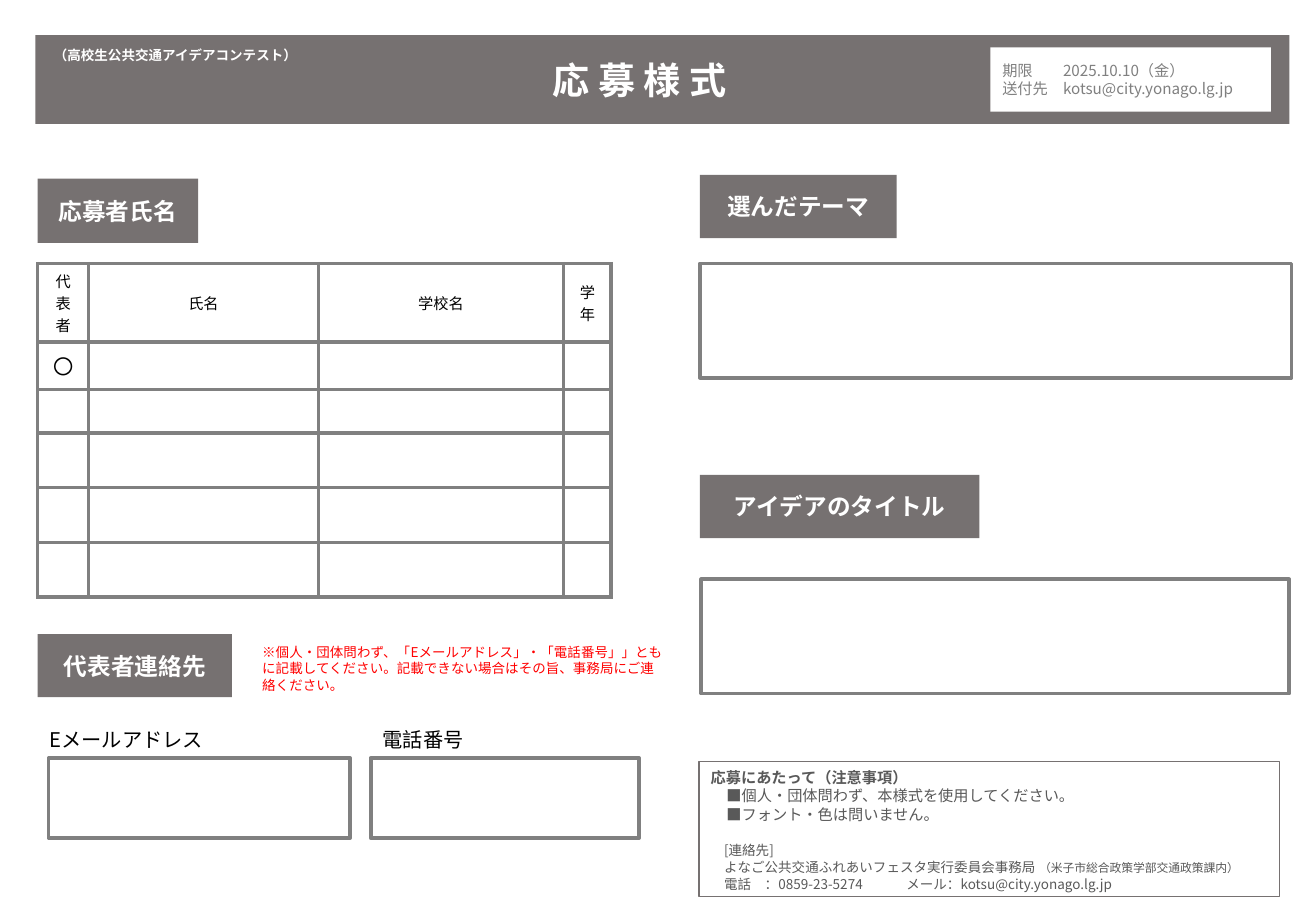
from dataclasses import dataclass

from lxml.etree import SubElement
from pptx import Presentation
from pptx.dml.color import RGBColor
from pptx.enum.shapes import MSO_SHAPE
from pptx.enum.text import MSO_ANCHOR, PP_ALIGN
from pptx.oxml.ns import qn
from pptx.util import Inches, Pt


@dataclass(frozen=True)
class Theme:
    font: str = "Noto Sans CJK JP"
    band: str = "767171"
    border: str = "808080"
    note: str = "595959"
    white: str = "FFFFFF"
    black: str = "000000"
    alert: str = "FF0000"
    title_size: int = 22
    heading_size: int = 14
    label_size: int = 12
    body_size: int = 9
    small_size: int = 8
    tiny_size: int = 7
    frame_width: float = 2.25


THEME = Theme()

HEADINGS = [
    ("応募者氏名", 0.31, 1.47, 1.32, 0.53),
    ("選んだテーマ", 5.76, 1.44, 1.62, 0.52),
    ("アイデアのタイトル", 5.76, 3.91, 2.3, 0.52),
    ("代表者連絡先", 0.31, 5.22, 1.6, 0.52),
]
ENTRY_FRAMES = [
    (5.76, 2.17, 4.87, 0.94),
    (5.77, 4.77, 4.84, 0.94),
    (0.4, 6.24, 2.48, 0.66),
    (3.05, 6.24, 2.21, 0.66),
]
APPLICANT_HEADERS = ["代表者", "氏名", "学校名", "学年"]
COLUMN_WIDTHS = [0.42, 1.89, 2.02, 0.39]
ROW_HEIGHTS = [0.64, 0.39, 0.36, 0.45, 0.45, 0.45]


def write(para, text, size=THEME.body_size, color=THEME.black, bold=False, spacing=0):
    """Add a run to the paragraph; spacing is the letter gap in points."""
    span = para.add_run()
    span.text = text
    font = span.font
    font.size, font.bold, font.name = Pt(size), bold, THEME.font
    font.color.rgb = RGBColor.from_string(color)
    properties = span._r.get_or_add_rPr()
    SubElement(properties, qn("a:ea"), typeface=THEME.font)
    if spacing:
        properties.set("spc", str(spacing * 100))


def set_layout(para, line=None, before=0, indent=0, tab=None):
    """Set line height and space before in points, indent and tab in inches."""
    if line:
        para.line_spacing = Pt(line)
    para.space_before = Pt(before)
    properties = para._p.get_or_add_pPr()
    properties.set("marL", str(Inches(indent)))
    properties.set("indent", "0")
    if tab:
        tabs = SubElement(properties, qn("a:tabLst"))
        SubElement(tabs, qn("a:tab"), pos=str(Inches(tab)), algn="l")


def add_box(slide, left, top, width, height, fill=None, line=None,
            line_width=THEME.frame_width, anchor=MSO_ANCHOR.MIDDLE):
    box = slide.shapes.add_shape(MSO_SHAPE.RECTANGLE, Inches(left), Inches(top),
                                 Inches(width), Inches(height))
    box.shadow.inherit = False
    if fill:
        box.fill.solid()
        box.fill.fore_color.rgb = RGBColor.from_string(fill)
    else:
        box.fill.background()
    if line:
        box.line.color.rgb = RGBColor.from_string(line)
        box.line.width = Pt(line_width)
    else:
        box.line.fill.background()
    box.text_frame.word_wrap = True
    box.text_frame.vertical_anchor = anchor
    box.text_frame.paragraphs[0].alignment = PP_ALIGN.LEFT
    return box


def add_band(slide, text, left, top, width, height, size=THEME.heading_size, spacing=0):
    box = add_box(slide, left, top, width, height, fill=THEME.band)
    para = box.text_frame.paragraphs[0]
    para.alignment = PP_ALIGN.CENTER
    write(para, text, size=size, color=THEME.white, bold=True, spacing=spacing)


def add_label(slide, text, left, top, width, height, line=None, **text_format):
    box = slide.shapes.add_textbox(Inches(left), Inches(top), Inches(width), Inches(height))
    frame = box.text_frame
    frame.word_wrap = True
    frame.vertical_anchor = MSO_ANCHOR.MIDDLE
    set_layout(frame.paragraphs[0], line=line)
    write(frame.paragraphs[0], text, **text_format)


def add_lines(box, lines):
    """Fill a box with (runs, layout) pairs, one paragraph each."""
    frame = box.text_frame
    for index, (runs, layout) in enumerate(lines):
        para = frame.add_paragraph() if index else frame.paragraphs[0]
        para.alignment = PP_ALIGN.LEFT
        set_layout(para, **layout)
        for text, text_format in runs:
            write(para, text, **text_format)


def style_cell(cell):
    properties = cell._tc.get_or_add_tcPr()
    for side in ("lnL", "lnR", "lnT", "lnB"):
        edge = SubElement(properties, qn(f"a:{side}"), w=str(Pt(THEME.frame_width)))
        paint = SubElement(edge, qn("a:solidFill"))
        SubElement(paint, qn("a:srgbClr"), val=THEME.border)
    cell.fill.background()
    cell.vertical_anchor = MSO_ANCHOR.MIDDLE
    para = cell.text_frame.paragraphs[0]
    para.alignment = PP_ALIGN.CENTER
    para._p.get_or_add_endParaRPr().set("sz", str(THEME.body_size * 100))


def add_applicant_table(slide):
    table = slide.shapes.add_table(
        len(ROW_HEIGHTS), len(COLUMN_WIDTHS), Inches(0.31), Inches(2.17),
        Inches(sum(COLUMN_WIDTHS)), Inches(sum(ROW_HEIGHTS))).table
    for column, width in zip(table.columns, COLUMN_WIDTHS):
        column.width = Inches(width)
    for row, height in zip(table.rows, ROW_HEIGHTS):
        row.height = Inches(height)
    for cell in table.iter_cells():
        style_cell(cell)
    for index, header in enumerate(APPLICANT_HEADERS):
        write(table.cell(0, index).text_frame.paragraphs[0], header)
    write(table.cell(1, 0).text_frame.paragraphs[0], "〇", size=THEME.label_size)


def add_deadline(slide):
    box = add_box(slide, 8.15, 0.39, 2.31, 0.53, fill=THEME.white)
    gray = {"color": THEME.border}
    layout = {"line": 10.6, "tab": 0.53}
    add_lines(box, [([(text, gray)], layout) for text in (
        "期限\t2025.10.10（金）", "送付先\tkotsu@city.yonago.lg.jp")])


def add_notes(slide):
    box = add_box(slide, 5.75, 6.27, 4.78, 1.11, line=THEME.band, line_width=1,
                  anchor=MSO_ANCHOR.TOP)
    body = {"color": THEME.note}
    small = {"color": THEME.note, "size": THEME.small_size}
    tiny = {"color": THEME.note, "size": THEME.tiny_size}
    rule = {"line": 11, "indent": 0.13}
    contact = {"line": 10.1, "indent": 0.11}
    add_lines(box, [
        ([("応募にあたって（注意事項）", body | {"bold": True})], {"line": 11}),
        ([("■個人・団体問わず、本様式を使用してください。", body)], rule),
        ([("■フォント・色は問いません。", body)], rule),
        ([("[連絡先]", small)], contact | {"before": 10.8}),
        ([("よなご公共交通ふれあいフェスタ実行委員会事務局 ", small),
          ("（米子市総合政策学部交通政策課内）", tiny)], contact),
        ([("電話　：0859-23-5274\tメール：kotsu@city.yonago.lg.jp", small)],
         contact | {"tab": 1.48}),
    ])


def main():
    deck = Presentation()
    deck.slide_width, deck.slide_height = Inches(10.83), Inches(7.5)
    page = deck.slides.add_slide(deck.slide_layouts[6])

    add_band(page, "応募様式　", 0.29, 0.29, 10.32, 0.73, size=THEME.title_size, spacing=5)
    add_band(page, "（高校生公共交通アイデアコンテスト）", 0.3, 0.31, 2.29, 0.29,
             size=THEME.small_size)
    add_deadline(page)
    for heading in HEADINGS:
        add_band(page, *heading)
    for frame in ENTRY_FRAMES:
        add_box(page, *frame, line=THEME.border)
    add_applicant_table(page)
    for text, left in (("Eメールアドレス", 0.31), ("電話番号", 3.05)):
        add_label(page, text, left, 5.9, 2.05, 0.37, size=THEME.label_size)
    add_label(page, "※個人・団体問わず、「Eメールアドレス」・「電話番号」」ともに記載してください。"
              "記載できない場合はその旨、事務局にご連絡ください。",
              2.06, 5.06, 3.53, 0.89, line=9.5, size=THEME.small_size, color=THEME.alert)
    add_notes(page)
    deck.save("out.pptx")


if __name__ == "__main__":
    main()
